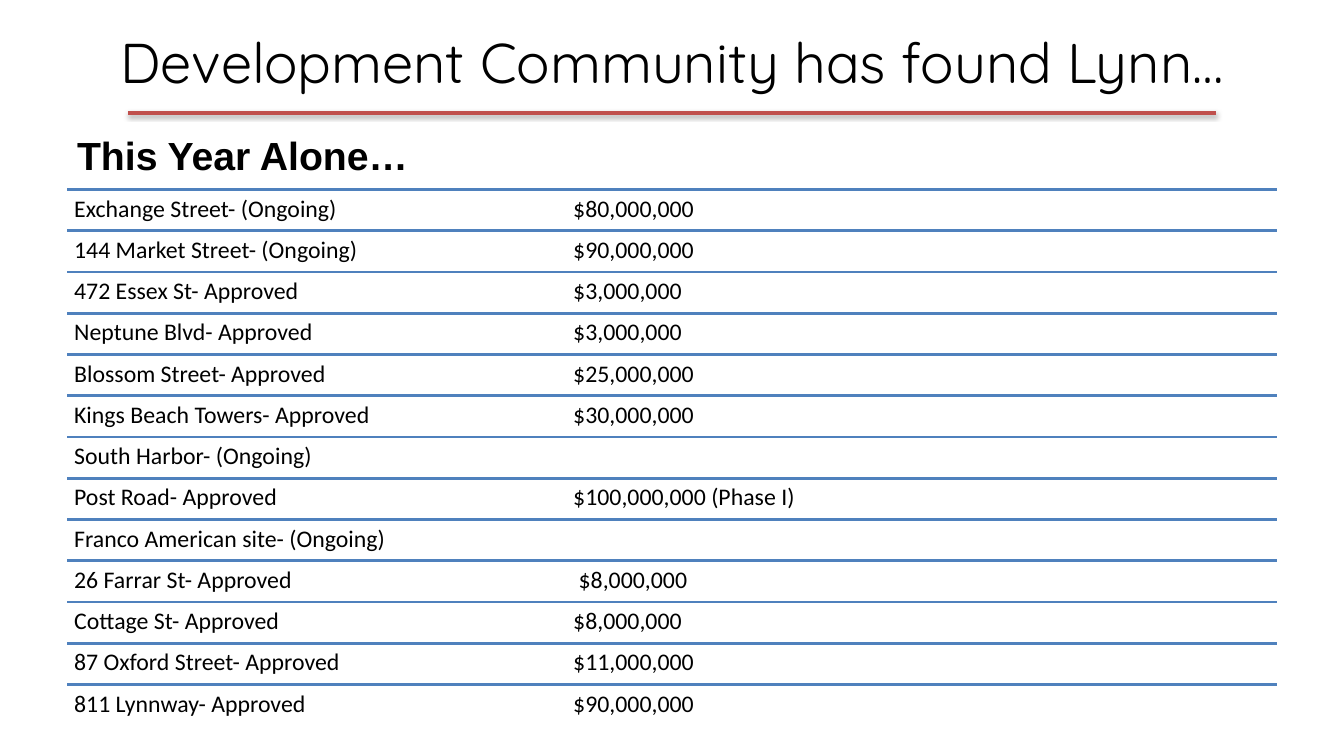
"""Builds the slide listing this year's development projects in Lynn."""
from lxml import etree
from pptx import Presentation
from pptx.dml.color import RGBColor
from pptx.enum.shapes import MSO_CONNECTOR
from pptx.enum.text import MSO_ANCHOR, PP_ALIGN
from pptx.oxml.ns import qn
from pptx.util import Pt

STRAIGHT = MSO_CONNECTOR.STRAIGHT
TOP, MIDDLE = MSO_ANCHOR.TOP, MSO_ANCHOR.MIDDLE
LEFT, CENTER = PP_ALIGN.LEFT, PP_ALIGN.CENTER

LIST_LEFT, LIST_TOP, LIST_WIDTH = 48, 135.4, 864
ROW_HEIGHT = 29.46
AMOUNT_TAB = 356.5
PROJECTS = [
    ("Exchange Street- (Ongoing)", "$80,000,000"),
    ("144 Market Street- (Ongoing)", "$90,000,000"),
    ("472 Essex St- Approved", "$3,000,000"),
    ("Neptune Blvd- Approved", "$3,000,000"),
    ("Blossom Street- Approved", "$25,000,000"),
    ("Kings Beach Towers- Approved", "$30,000,000"),
    ("South Harbor- (Ongoing)", ""),
    ("Post Road- Approved", "$100,000,000 (Phase I)"),
    ("Franco American site- (Ongoing)", ""),
    ("26 Farrar St- Approved", " $8,000,000"),
    ("Cottage St- Approved", "$8,000,000"),
    ("87 Oxford Street- Approved", "$11,000,000"),
    ("811 Lynnway- Approved", "$90,000,000"),
]


def add_text(x, y, w, h, text, font, size, inset=(7.2, 3.6), anchor=TOP, align=LEFT):
    """Add a one-line text box and return its paragraph and run."""
    tf = s.shapes.add_textbox(Pt(x), Pt(y), Pt(w), Pt(h)).text_frame
    tf.word_wrap = True
    tf.vertical_anchor = anchor
    tf.margin_left = tf.margin_right = Pt(inset[0])
    tf.margin_top = tf.margin_bottom = Pt(inset[1])
    p = tf.paragraphs[0]
    p.alignment = align
    r = p.add_run()
    r.text = text
    r.font.name = font
    r.font.size = Pt(size)
    r.font.color.rgb = RGBColor.from_string("000000")
    return p, r


def add_rule(x, y, w, color, weight):
    """Add a horizontal line and return its empty effect list."""
    line = s.shapes.add_connector(STRAIGHT, Pt(x), Pt(y), Pt(x + w), Pt(y))
    line.line.color.rgb = RGBColor.from_string(color)
    line.line.width = Pt(weight)
    return etree.SubElement(line._element.spPr, qn("a:effectLst"))


prs = Presentation()
prs.slide_width, prs.slide_height = Pt(960), Pt(540)
s = prs.slides.add_slide(prs.slide_layouts[6])

add_text(48, 7.2, 864, 73.4, "Development Community has found Lynn…", "Quicksand", 40,
         anchor=MIDDLE, align=CENTER)

effects = add_rule(91.4, 80.6, 777, "C0504D", 3)
shadow = etree.SubElement(effects, qn("a:outerShdw"), blurRad=str(Pt(3.1)),
                          dist=str(Pt(1.8)), dir="5400000", rotWithShape="0")
shade = etree.SubElement(shadow, qn("a:srgbClr"), val="000000")
etree.SubElement(shade, qn("a:alpha"), val="35000")

for i, (project, amount) in enumerate(PROJECTS):
    y = LIST_TOP + i * ROW_HEIGHT
    add_rule(LIST_LEFT, y, LIST_WIDTH, "4F81BD", 2)
    text = f"{project}\t{amount}" if amount else project
    p, r = add_text(LIST_LEFT, y, LIST_WIDTH, ROW_HEIGHT, text, "Calibri", 17, inset=(5, 5))
    tabs = etree.SubElement(p._p.get_or_add_pPr(), qn("a:tabLst"))
    etree.SubElement(tabs, qn("a:tab"), pos=str(Pt(AMOUNT_TAB)), algn="l")
    p.line_spacing = 0.9

p, r = add_text(48, 90, 542, 41, "This Year Alone…", "Arial", 28)
r.font.bold = True

prs.save("out.pptx")
